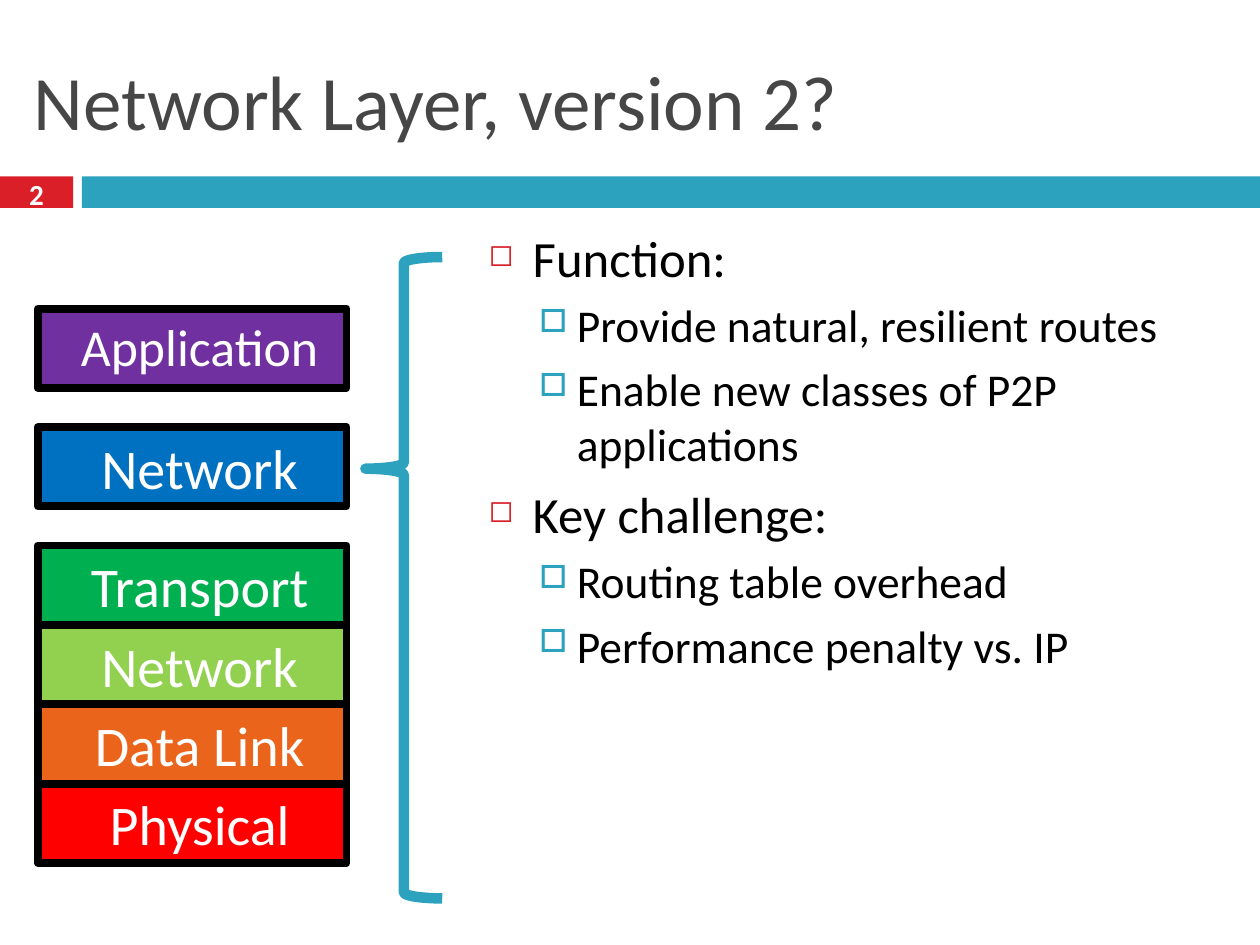
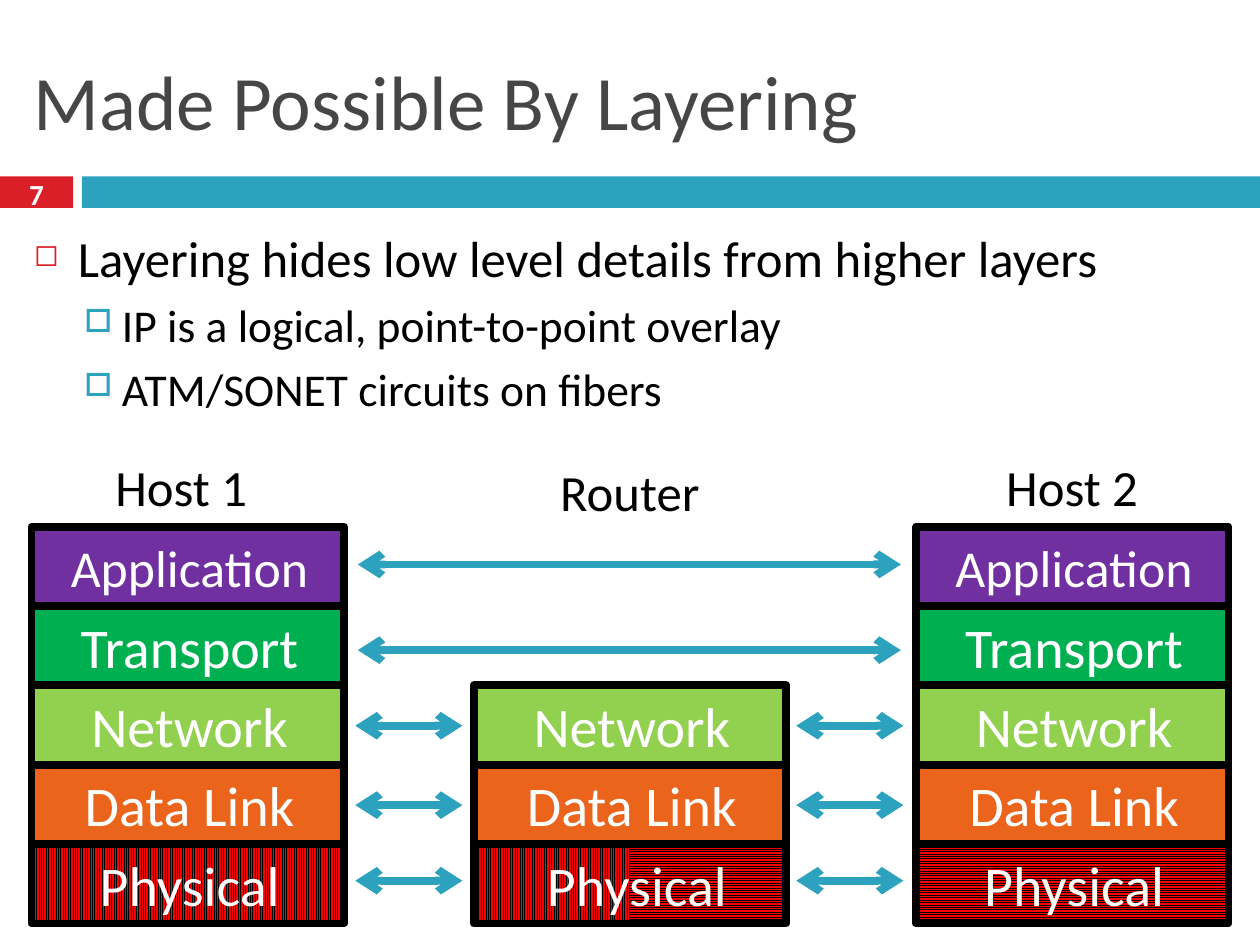
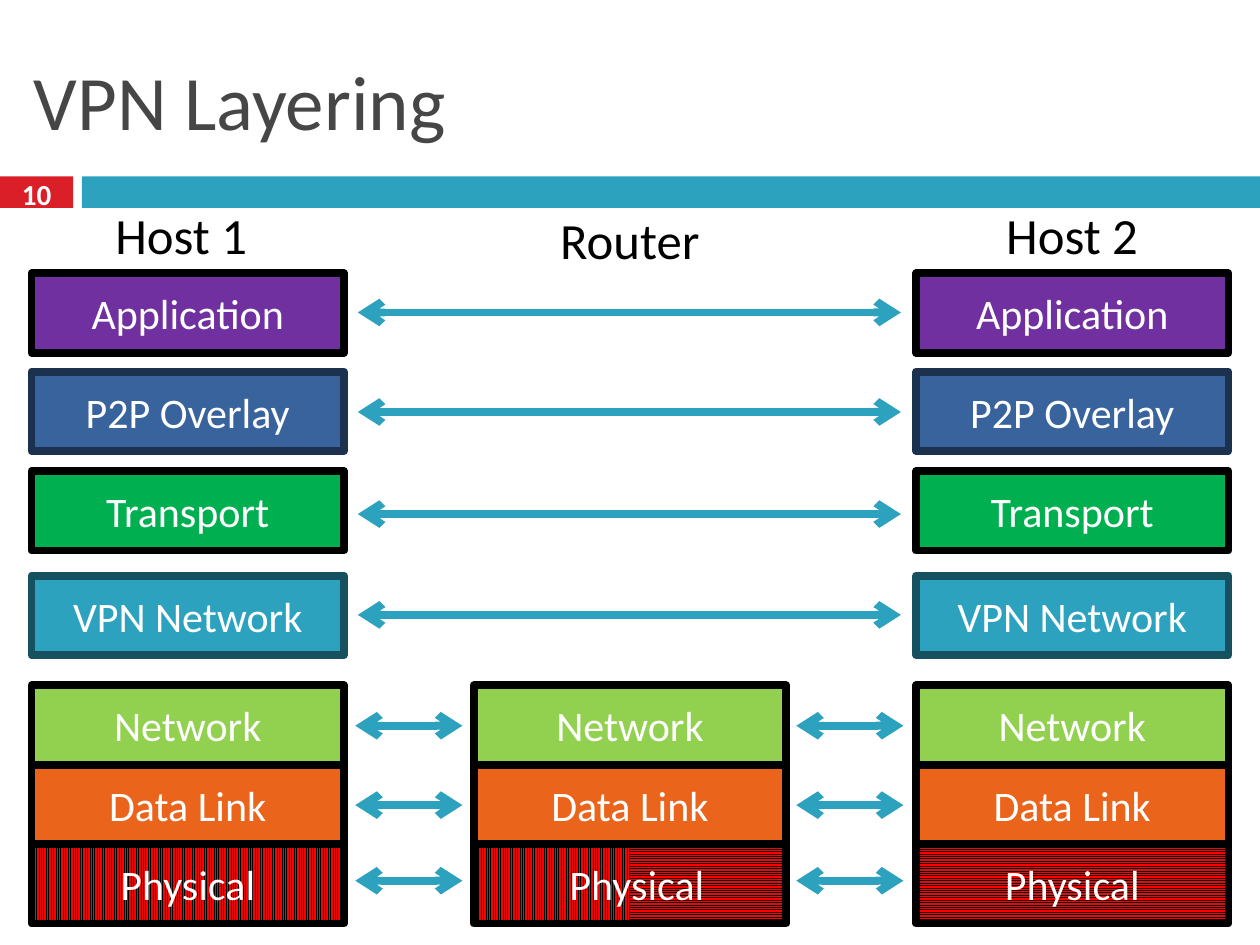
from lxml import etree
from pptx import Presentation, util as u
from pptx.dml.color import RGBColor
from pptx.enum import dml, shapes, text
from pptx.oxml.ns import qn

BLACK = RGBColor(0x00, 0x00, 0x00)
WHITE = RGBColor(0xFF, 0xFF, 0xFF)
GREY = RGBColor(0x46, 0x46, 0x46)
CRIMSON = RGBColor(0xDA, 0x1F, 0x28)
TEAL = RGBColor(0x2D, 0xA2, 0xBF)
DEEP_TEAL = RGBColor(0x17, 0x51, 0x60)
PURPLE = RGBColor(0x70, 0x30, 0xA0)
BLUE = RGBColor(0x00, 0x70, 0xC0)
STEEL = RGBColor(0x39, 0x63, 0x9D)
DEEP_STEEL = RGBColor(0x1C, 0x31, 0x4E)
GREEN = RGBColor(0x00, 0xB0, 0x50)
LIME = RGBColor(0x92, 0xD0, 0x50)
ORANGE = RGBColor(0xEB, 0x64, 0x1B)
RED = RGBColor(0xFF, 0x00, 0x00)

VERTICAL = dml.MSO_PATTERN.LIGHT_VERTICAL
HORIZONTAL = dml.MSO_PATTERN.LIGHT_HORIZONTAL
RECT = shapes.MSO_SHAPE.RECTANGLE
TOP, MIDDLE = text.MSO_ANCHOR.TOP, text.MSO_ANCHOR.MIDDLE
LEFT, CENTER = text.PP_ALIGN.LEFT, text.PP_ALIGN.CENTER

WIDTH, HEIGHT = 10, 7.5
LAYER_W, LAYER_H = 2.48, 0.63
HOST_1, ROUTER, HOST_2 = [0.25 + 3.51 * column for column in range(3)]
PHYSICAL, DATA_LINK, NETWORK, TRANSPORT, APPLICATION = [6.7 - LAYER_H * row for row in range(5)]
FULL_SPAN = [(2.84, 7.15)]
HOP_SPANS = [(2.82, 3.67), (6.32, 7.17)]

LAYER_COLOURS = {
    "Application": (PURPLE, BLACK),
    "P2P Overlay": (STEEL, DEEP_STEEL),
    "Transport": (GREEN, BLACK),
    "VPN Network": (TEAL, DEEP_TEAL),
    "Network": (LIME, BLACK),
    "Data Link": (ORANGE, BLACK),
    "Physical": (RED, BLACK),
}
TITLE_FONT = {"size": u.Pt(44), "color": GREY}
NUMBER_FONT = {"size": u.Pt(16.6), "color": WHITE, "bold": True}
LABEL_FONT = {"size": u.Pt(29), "color": BLACK}
OUTLINE = [
    {"font": LABEL_FONT, "margin": 0.35, "hang": 0.35, "before": 7,
     "mark": "◻", "mark_colour": CRIMSON, "mark_size": 60},
    {"font": {"size": u.Pt(26), "color": BLACK}, "margin": 0.7, "hang": 0.3, "before": 5.5,
     "mark": "□", "mark_colour": TEAL, "mark_size": 70},
]


def draw(slide, kind, box, fill=None, edge=None, weight=4.5, pattern=None):
    shape = slide.shapes.add_shape(kind, *map(u.Inches, box))
    shape.shadow.inherit = False
    if pattern is not None:
        shape.fill.patterned()
        shape.fill.pattern = pattern
        shape.fill.fore_color.rgb = BLACK
        shape.fill.back_color.rgb = fill
    elif fill is not None:
        shape.fill.solid()
        shape.fill.fore_color.rgb = fill
    else:
        shape.fill.background()
    if edge is not None:
        shape.line.color.rgb = edge
        shape.line.width = u.Pt(weight)
    else:
        shape.line.fill.background()
    return shape


def write(shape, words, font, align=CENTER, anchor=MIDDLE, margin=0):
    frame = shape.text_frame
    frame.word_wrap = True
    frame.vertical_anchor = anchor
    paragraph = frame.paragraphs[0] if not frame.text else frame.add_paragraph()
    paragraph.alignment = align
    paragraph._p.get_or_add_pPr().set("marL", str(u.Inches(margin)))
    run = paragraph.add_run()
    run.text = words
    run.font.name = "Calibri"
    for name, value in font.items():
        if name == "color":
            run.font.color.rgb = value
        else:
            setattr(run.font, name, value)
    return paragraph


deck = Presentation()
deck.slide_width, deck.slide_height = u.Inches(WIDTH), u.Inches(HEIGHT)

pages = [
    {"title": "Network Layer, version 2?", "number": "2", "body": (3.78, 1.75, 6.06, 5.58),
     "points": [(0, "Function:"), (1, "Provide natural, resilient routes"),
                (1, "Enable new classes of P2P applications"), (0, "Key challenge:"),
                (1, "Routing table overhead"), (1, "Performance penalty vs. IP")]},
    {"title": "Made Possible By Layering", "number": "7", "body": (0.17, 1.75, 9.67, 1.82),
     "points": [(0, "Layering hides low level details from higher layers"),
                (1, "IP is a logical, point-to-point overlay"),
                (1, "ATM/SONET circuits on fibers")],
     "labels_top": 3.57, "sizes": (29.6, 32), "margin": 0.03,
     "end_layers": [("Application", APPLICATION, 4.48), ("Transport", TRANSPORT, 5.16)]},
    {"title": "VPN Layering", "number": "10", "points": [],
     "labels_top": 1.57, "sizes": (24, 24), "margin": 0,
     "end_layers": [("Application", 2.17, 2.48), ("P2P Overlay", 2.95, 3.27),
                    ("Transport", 3.74, 4.08), ("VPN Network", 4.57, 4.88)]},
]
shared_layers = [("Network", NETWORK, 5.76), ("Data Link", DATA_LINK, 6.39),
                 ("Physical", PHYSICAL, 6.99)]

for page in pages:
    slide = deck.slides.add_slide(deck.slide_layouts[6])
    page["slide"] = slide
    for left, width, colour in [(0, 0.58, CRIMSON), (0.65, WIDTH - 0.65, TEAL)]:
        draw(slide, RECT, (left, 1.4, width, 0.25), colour)
    title = slide.shapes.add_textbox(*map(u.Inches, (0.17, 0.25, 9.67, 1.08)))
    write(title, page["title"], TITLE_FONT, LEFT)
    number = slide.shapes.add_textbox(*map(u.Inches, (0, 1.37, 0.58, 0.33)))
    write(number, page["number"], NUMBER_FONT)
    if page["points"]:
        body = slide.shapes.add_textbox(*map(u.Inches, page["body"]))
    for level, words in page["points"]:
        style = OUTLINE[level]
        point = write(body, words, style["font"], LEFT, TOP, style["margin"])
        point.level = level
        point.space_before = u.Pt(style["before"])
        props = point._p.get_or_add_pPr()
        props.set("indent", str(-u.Inches(style["hang"])))
        mark_colour = etree.SubElement(props, qn("a:buClr"))
        etree.SubElement(mark_colour, qn("a:srgbClr"), val=str(style["mark_colour"]))
        etree.SubElement(props, qn("a:buSzPct"), val=str(style["mark_size"] * 1000))
        etree.SubElement(props, qn("a:buChar"), char=style["mark"])

stack_slide = pages[0]["slide"]
stack = [("Application", 2.45, PURPLE), ("Network", 3.39, BLUE)]
stack += [(name, 4.33 + LAYER_H * row, LAYER_COLOURS[name][0])
          for row, name in enumerate(["Transport", "Network", "Data Link", "Physical"])]
for name, top, colour in stack:
    layer = draw(stack_slide, RECT, (0.3, top, 2.45, LAYER_H), colour, BLACK)
    size = 29.6 if name == "Application" else 32
    write(layer, name, {"size": u.Pt(size), "color": WHITE}, anchor=TOP, margin=0.12)
brace = draw(stack_slide, shapes.MSO_SHAPE.LEFT_BRACE, (2.9, 2.04, 0.61, 5.09), None, TEAL, 6)
brace.adjustments[0], brace.adjustments[1] = 0.08, 0.33

for page in pages[1:]:
    slide = page["slide"]
    for name, left, drop in [("Host 1", 0.66, 0), ("Router", 4.22, 0.04), ("Host 2", 7.73, 0)]:
        label = slide.shapes.add_textbox(
            *map(u.Inches, (left, page["labels_top"] + drop, 1.56, 0.59)))
        write(label, name, LABEL_FONT, anchor=TOP)

    for name, top, arrow_y in page["end_layers"] + shared_layers:
        shared = (name, top, arrow_y) in shared_layers
        fill, edge = LAYER_COLOURS[name]
        first_size, other_size = page["sizes"]
        size = first_size if name == "Application" else other_size
        font = {"size": u.Pt(size), "color": WHITE}
        for left in [HOST_1, ROUTER, HOST_2] if shared else [HOST_1, HOST_2]:
            box = (left, top, LAYER_W, LAYER_H)
            margin = page["margin"]
            if name == "Physical" and left == ROUTER:
                half = LAYER_W / 2
                for side, pattern in enumerate([VERTICAL, HORIZONTAL]):
                    draw(slide, RECT, (left + half * side, top, half, LAYER_H), fill,
                         pattern=pattern)
                layer = draw(slide, RECT, box, None, edge)
                margin = 0.11
            elif name == "Physical":
                layer = draw(slide, RECT, box, fill, edge,
                             pattern=VERTICAL if left == HOST_1 else HORIZONTAL)
            else:
                layer = draw(slide, RECT, box, fill, edge)
            write(layer, name, font, margin=margin)

        for start, end in HOP_SPANS if shared else FULL_SPAN:
            arrow = slide.shapes.add_connector(
                shapes.MSO_CONNECTOR.STRAIGHT, *map(u.Inches, (start, arrow_y, end, arrow_y)))
            arrow.line.color.rgb = TEAL
            arrow.line.width = u.Pt(4.5)
            for tip in ["a:headEnd", "a:tailEnd"]:
                etree.SubElement(arrow.line._get_or_add_ln(), qn(tip), type="arrow")
            etree.SubElement(arrow._element.spPr, qn("a:effectLst"))

deck.save("out.pptx")
